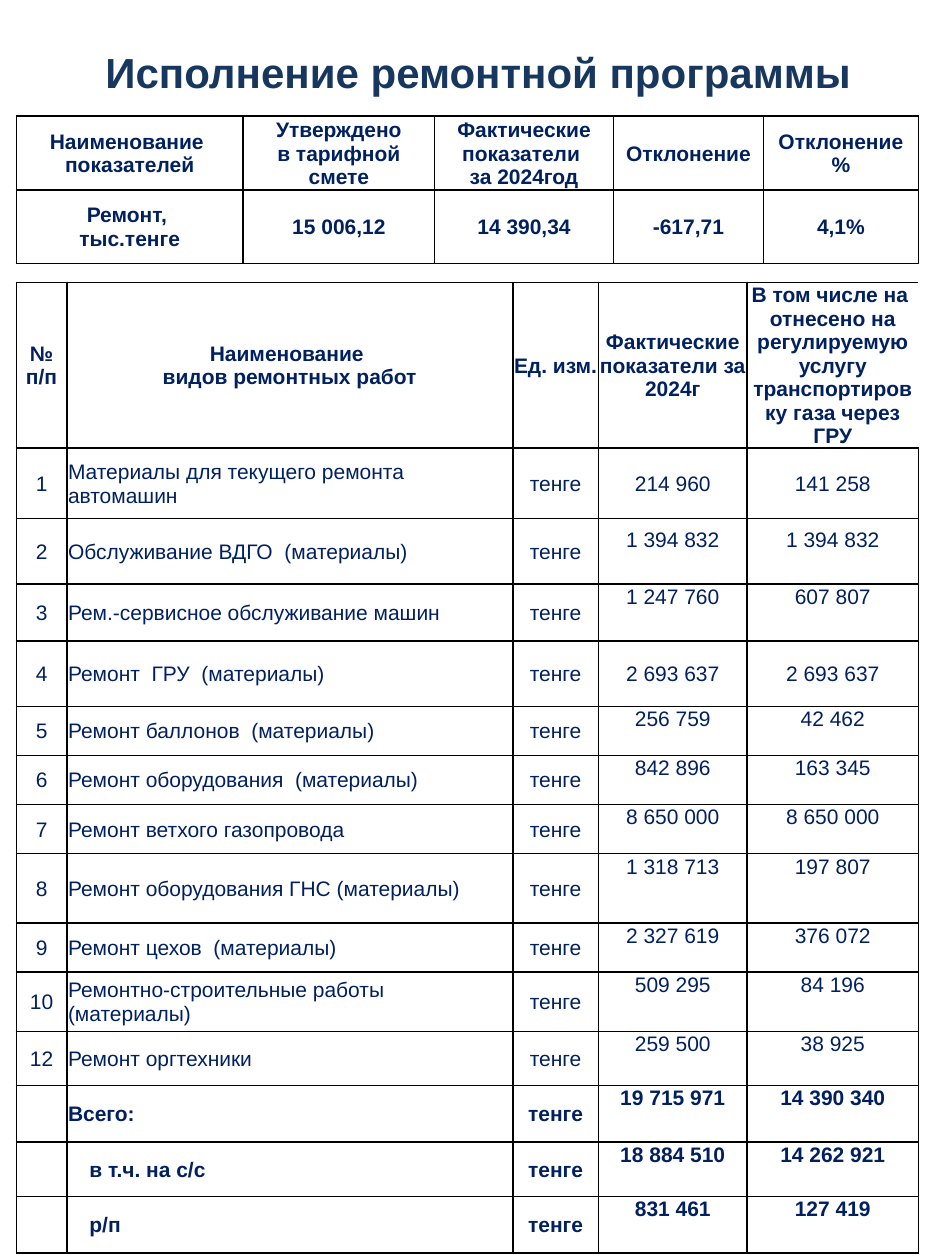
from lxml import etree
from pptx import Presentation
from pptx.dml.color import RGBColor
from pptx.enum.text import MSO_ANCHOR, PP_ALIGN
from pptx.oxml.ns import qn
from pptx.util import Inches, Pt

CENTER, LEFT = PP_ALIGN.CENTER, PP_ALIGN.LEFT
MIDDLE, TOP = MSO_ANCHOR.MIDDLE, MSO_ANCHOR.TOP
FONT, NAVY, TITLE_BLUE, BLACK = "Arial", "002060", "17375E", "000000"

# Content: "|" starts a new paragraph, "\n" breaks a line
TITLE = "Исполнение ремонтной программы"
SUMMARY = [
    ("Наименование  показателей", "Утверждено\nв тарифной смете",
     "Фактические показатели \nза 2024год", "Отклонение", "Отклонение\n%"),
    ("Ремонт, |тыс.тенге", "15 006,12", "14 390,34", "-617,71", "4,1%"),
]
WORKS_HEADER = (
    "№ п/п", "Наименование |видов ремонтных работ", "Ед. изм. ",
    "Фактические показатели за 2024г",
    "В том числе на  отнесено на регулируемую услугу транспортировку газа через ГРУ")
UNIT = "тенге"
# Number, work, actual amount, share of the regulated service, row height
WORKS = [
    ("1", "Материалы для текущего ремонта автомашин", "214 960", "141 258", 0.56),
    ("2", "Обслуживание ВДГО  (материалы)", "1 394 832", "1 394 832", 0.52),
    ("3", "Рем.-сервисное обслуживание машин", "1 247 760", "607 807", 0.45),
    ("4", "Ремонт  ГРУ  (материалы)", "2 693 637", "2 693 637", 0.52),
    ("5", "Ремонт баллонов  (материалы)", "256 759", "42 462", 0.39),
    ("6", "Ремонт оборудования  (материалы)", "842 896", "163 345", 0.39),
    ("7", "Ремонт ветхого газопровода", "8 650 000", "8 650 000", 0.39),
    ("8", "Ремонт оборудования ГНС (материалы)", "1 318 713", "197 807", 0.55),
    ("9", "Ремонт цехов  (материалы)", "2 327 619", "376 072", 0.39),
    ("10", "Ремонтно-строительные работы  (материалы)", "509 295", "84 196", 0.47),
    ("12", "Ремонт оргтехники", "259 500", "38 925", 0.43),
    ("", "Всего:", "19 715 971", "14 390 340", 0.45),
    ("", "в т.ч. на с/с", "18 884 510", "14 262 921", 0.43),
    ("", "р/п", "831 461", "127 419", 0.45),
]
CENTERED_AMOUNTS = ("1", "2", "4")
RAISED_AMOUNTS = ("2",)
INDENTED = ("в т.ч. на с/с", "р/п")


def color(hex_code):
    return RGBColor.from_string(hex_code)


def add_span(para, text, size, hex_code, bold):
    span = para.add_run()
    span.text = text
    span.font.name, span.font.size, span.font.bold = FONT, Pt(size), bold
    span.font.color.rgb = color(hex_code)


def add_borders(cell, sides):
    properties = cell._tc.get_or_add_tcPr()
    for side in sides:
        line = etree.SubElement(properties, qn("a:ln" + side), w=str(Pt(1)))
        fill = etree.SubElement(line, qn("a:solidFill"))
        etree.SubElement(fill, qn("a:srgbClr"), val=BLACK)


def fill_cell(cell, text, bold=True, align=CENTER, anchor=MIDDLE,
              left=0.01, bottom=0, sides="LRTB"):
    add_borders(cell, sides)
    cell.fill.background()
    cell.vertical_anchor = anchor
    cell.margin_left, cell.margin_bottom = Inches(left), Inches(bottom)
    cell.margin_right = cell.margin_top = Inches(0.01)
    frame = cell.text_frame
    for index, block in enumerate(text.split("|")):
        para = frame.add_paragraph() if index else frame.paragraphs[0]
        para.alignment = align
        for number, line in enumerate(block.split("\n")):
            if number:
                para.add_line_break()
            if line:
                add_span(para, line, 12, NAVY, bold)


def add_grid(page, top, widths, heights):
    frame = page.shapes.add_table(
        len(heights), len(widths), Inches(0.13), Inches(top),
        Inches(sum(widths)), Inches(sum(heights)))
    table = frame.table
    table.first_row = table.horz_banding = False
    for column, width in zip(table.columns, widths):
        column.width = Inches(width)
    for row, height in zip(table.rows, heights):
        row.height = Inches(height)
    return table


deck = Presentation()
deck.slide_width, deck.slide_height = Inches(7.5), Inches(10)
page = deck.slides.add_slide(deck.slide_layouts[5])

# Title
title = page.shapes.title
title.left, title.top = Inches(0.29), Inches(0.2)
title.width, title.height = Inches(7.01), Inches(0.74)
title.text_frame.vertical_anchor = MIDDLE
heading = title.text_frame.paragraphs[0]
heading.alignment = CENTER
add_span(heading, TITLE, 24, TITLE_BLUE, True)

# Repair works table
works = add_grid(page, 2.24, (0.4, 3.54, 0.68, 1.18, 1.36),
                 [1.13] + [work[-1] for work in WORKS])
for column, text in enumerate(WORKS_HEADER):
    last = column == len(WORKS_HEADER) - 1
    fill_cell(works.cell(0, column), text, sides="LTB" if last else "LRTB")
for row, (number, name, actual, share, _) in enumerate(WORKS, start=1):
    bold = not number
    fill_cell(works.cell(row, 0), number, bold)
    fill_cell(works.cell(row, 1), name, bold, LEFT,
              left=0.18 if name in INDENTED else 0.01)
    fill_cell(works.cell(row, 2), UNIT, bold)
    for column, amount in ((3, actual), (4, share)):
        fill_cell(works.cell(row, column), amount, bold,
                  anchor=MIDDLE if number in CENTERED_AMOUNTS else TOP,
                  bottom=0.19 if number in RAISED_AMOUNTS else 0)

# Summary table
summary = add_grid(page, 0.92, (1.8, 1.52, 1.42, 1.19, 1.23), (0.59, 0.58))
for row, texts in enumerate(SUMMARY):
    for column, text in enumerate(texts):
        fill_cell(summary.cell(row, column), text)

deck.save("out.pptx")
